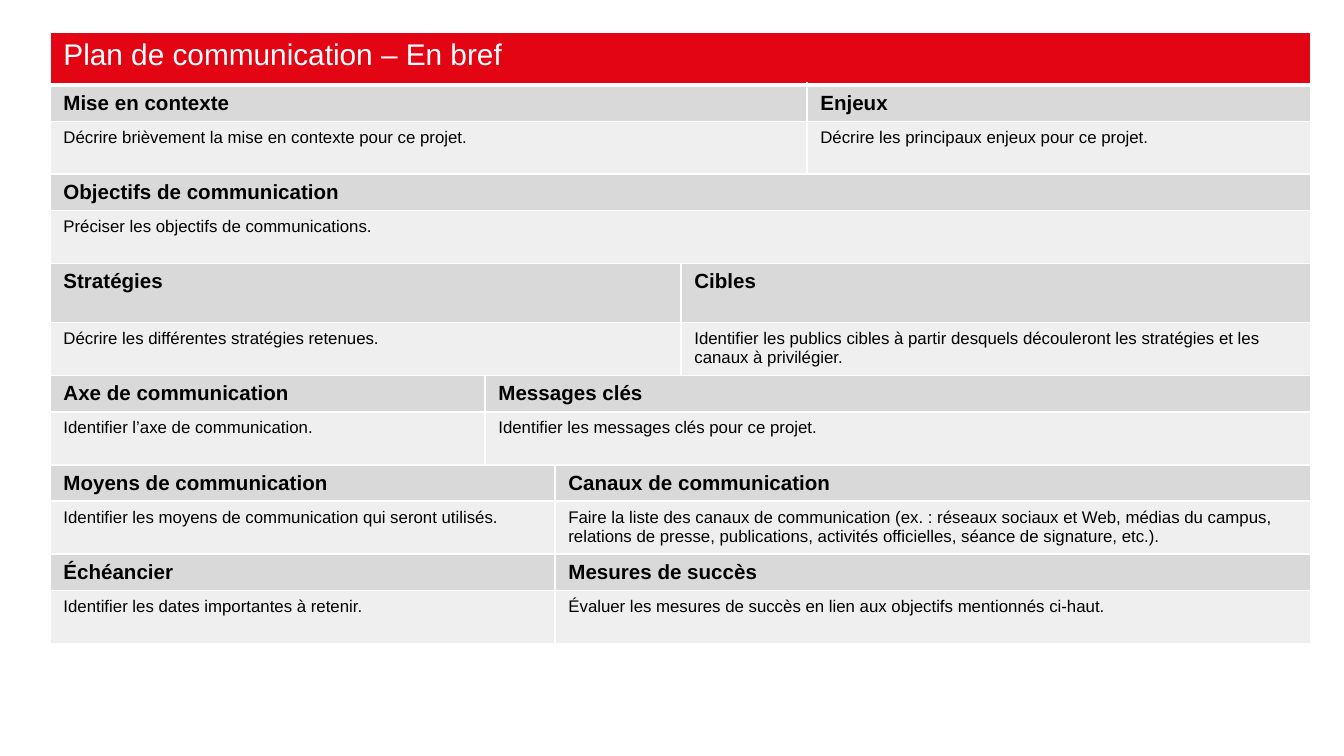
import dataclasses

import lxml.etree
import pptx
import pptx.dml.color
import pptx.oxml.ns
import pptx.table
import pptx.util

EMU_PER_PX = 6804  # 134.4 px to the inch
TITLE_HEIGHT, HEADING_HEIGHT, DETAIL_HEIGHT = 53, 36, 53
COLUMN_WIDTHS = [435, 70, 126, 126, 504]
WHITE, BLACK = "FFFFFF", "000000"


@dataclasses.dataclass(frozen=True)
class Style:
    fill: str
    color: str
    size: int
    bold: bool = False


@dataclasses.dataclass(frozen=True)
class Section:
    heading: str
    detail: str
    span: int


@dataclasses.dataclass(frozen=True)
class Band:
    sections: list[Section]
    heading_height: int = HEADING_HEIGHT


TITLE = Style("E30513", WHITE, 16)
HEADING = Style("D9D9D9", BLACK, 11, True)
DETAIL = Style("EFEFEF", BLACK, 9)

BANDS = [
    Band([
        Section("Mise en contexte", "Décrire brièvement la mise en contexte pour ce projet.", 4),
        Section("Enjeux", "Décrire les principaux enjeux pour ce projet.", 1),
    ]),
    Band([Section("Objectifs de communication", "Préciser les objectifs de communications.", 5)]),
    Band([
        Section("Stratégies", "Décrire les différentes stratégies retenues.", 3),
        Section("Cibles", "Identifier les publics cibles à partir desquels découleront "
                "les stratégies et les canaux à privilégier.", 2),
    ], heading_height=59),
    Band([
        Section("Axe de communication", "Identifier l’axe de communication.", 1),
        Section("Messages clés", "Identifier les messages clés pour ce projet.", 4),
    ]),
    Band([
        Section("Moyens de communication",
                "Identifier les moyens de communication qui seront utilisés.", 2),
        Section("Canaux de communication",
                "Faire la liste des canaux de communication (ex. : réseaux sociaux et Web, "
                "médias du campus, relations de presse, publications, activités officielles, "
                "séance de signature, etc.).", 3),
    ]),
    Band([
        Section("Échéancier", "Identifier les dates importantes à retenir.", 2),
        Section("Mesures de succès",
                "Évaluer les mesures de succès en lien aux objectifs mentionnés ci-haut.", 3),
    ]),
]


def px(length: int) -> pptx.util.Emu:
    return pptx.util.Emu(length * EMU_PER_PX)


def rgb(value: str) -> pptx.dml.color.RGBColor:
    return pptx.dml.color.RGBColor.from_string(value)


def set_borders(cell: pptx.table._Cell, top: int = 1, bottom: int = 1) -> None:
    """Draw white borders; widths are in points."""
    qn = pptx.oxml.ns.qn
    properties = cell._tc.get_or_add_tcPr()
    for side, width in (("L", 1), ("R", 1), ("T", top), ("B", bottom)):
        line = lxml.etree.SubElement(properties, qn(f"a:ln{side}"), w=str(pptx.util.Pt(width)))
        solid = lxml.etree.SubElement(line, qn("a:solidFill"))
        lxml.etree.SubElement(solid, qn("a:srgbClr"), val=WHITE)


def fill_row(plan: pptx.table.Table, row: int, height: int,
             entries: list[tuple[str, int]], style: Style) -> None:
    """Write (text, column span) entries from left to right."""
    plan.rows[row].height = px(height)
    for column in range(len(COLUMN_WIDTHS)):
        cell = plan.cell(row, column)
        set_borders(cell, top=3 if row == 1 else 1, bottom=3 if row == 0 else 1)
        cell.fill.solid()
        cell.fill.fore_color.rgb = rgb(style.fill)
    column = 0
    for text, span in entries:
        cell = plan.cell(row, column)
        if span > 1:
            cell.merge(plan.cell(row, column + span - 1))
        run = cell.text_frame.paragraphs[0].add_run()
        run.text = text
        run.font.name = "Arial"
        run.font.size = pptx.util.Pt(style.size)
        run.font.bold = style.bold
        run.font.color.rgb = rgb(style.color)
        column += span


def main() -> None:
    deck = pptx.Presentation()
    deck.slide_width, deck.slide_height = px(1344), px(756)
    slide = deck.slides.add_slide(deck.slide_layouts[6])

    # Plan grid
    height = TITLE_HEIGHT + sum(band.heading_height + DETAIL_HEIGHT for band in BANDS)
    plan = slide.shapes.add_table(
        1 + 2 * len(BANDS), len(COLUMN_WIDTHS),
        px(50), px(32), px(sum(COLUMN_WIDTHS)), px(height)).table
    plan.first_row = plan.horz_banding = False
    for column, width in zip(plan.columns, COLUMN_WIDTHS):
        column.width = px(width)

    # Title row, then a heading row and a detail row for each band
    fill_row(plan, 0, TITLE_HEIGHT,
             [("Plan de communication – En bref", len(COLUMN_WIDTHS))], TITLE)
    for index, band in enumerate(BANDS):
        row = 1 + 2 * index
        fill_row(plan, row, band.heading_height,
                 [(section.heading, section.span) for section in band.sections], HEADING)
        fill_row(plan, row + 1, DETAIL_HEIGHT,
                 [(section.detail, section.span) for section in band.sections], DETAIL)

    deck.save("out.pptx")


if __name__ == "__main__":
    main()
